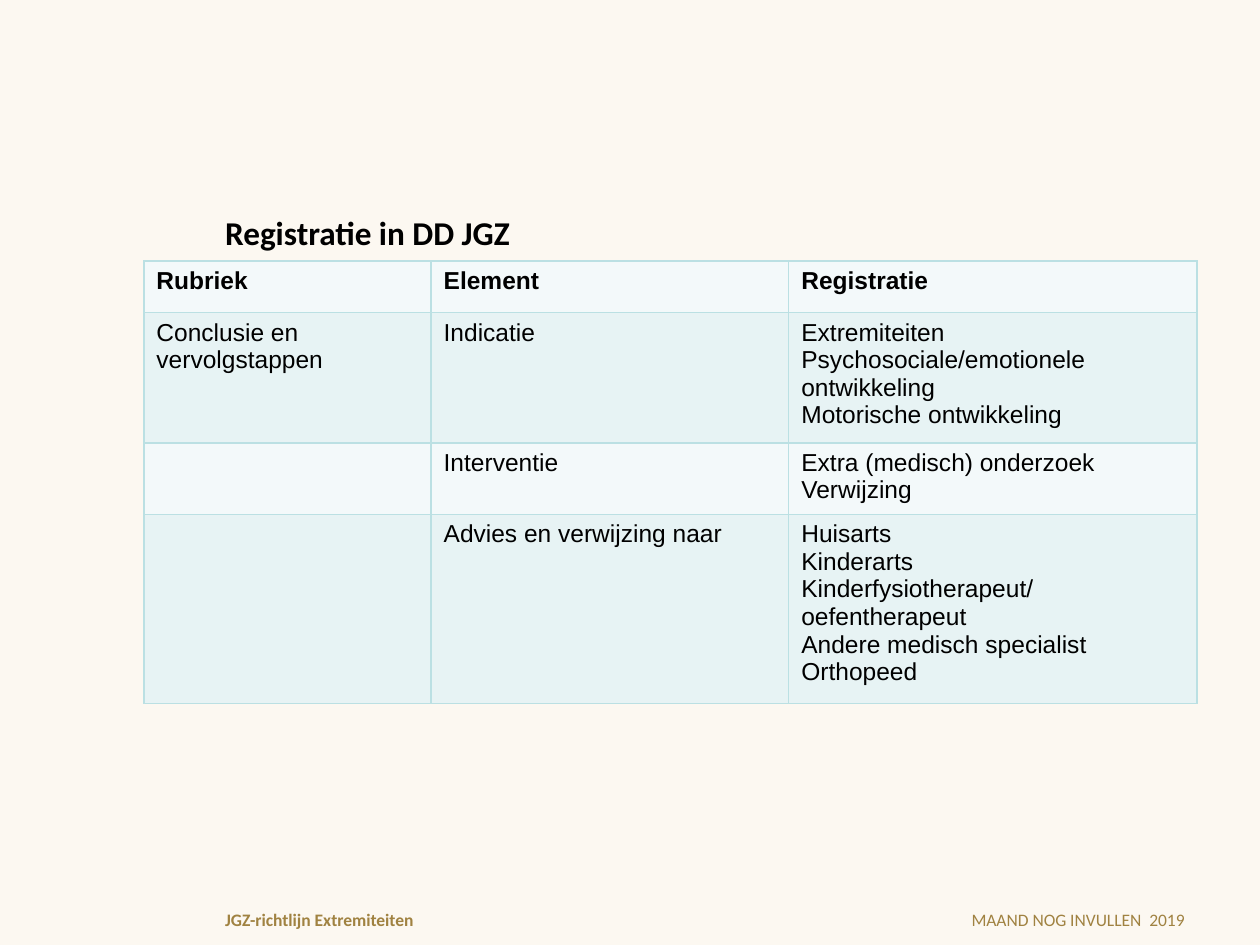
from lxml import etree
from pptx import Presentation
from pptx.dml.color import RGBColor
from pptx.enum.text import MSO_ANCHOR, PP_ALIGN
from pptx.oxml.ns import qn
from pptx.util import Cm, Pt

LEFT, RIGHT = PP_ALIGN.LEFT, PP_ALIGN.RIGHT
MIDDLE = MSO_ANCHOR.MIDDLE

CREAM = RGBColor(0xFC, 0xF8, 0xF1)
BLACK = RGBColor(0x00, 0x00, 0x00)
GOLD = RGBColor(0xA0, 0x82, 0x41)
LIGHT_ROW = RGBColor(0xF3, 0xF9, 0xFA)
DARK_ROW = RGBColor(0xE7, 0xF3, 0xF4)
BORDER = RGBColor(0xBB, 0xE0, 0xE3)

COL_WIDTHS = [5.79, 7.21, 8.23]
ROW_HEIGHTS = [1.04, 2.48, 1.37, 3.58]
ROWS = [
    ["Rubriek", "Element", "Registratie"],
    ["Conclusie en vervolgstappen", "Indicatie",
     "Extremiteiten\nPsychosociale/emotionele ontwikkeling\nMotorische ontwikkeling"],
    ["", "Interventie", "Extra (medisch) onderzoek\nVerwijzing"],
    ["", "Advies en verwijzing naar",
     "Huisarts\nKinderarts\nKinderfysiotherapeut/oefentherapeut\n"
     "Andere medisch specialist\nOrthopeed"],
]


def style_text(tf, font, size, color, bold=False, align=LEFT):
    for p in tf.paragraphs:
        p.alignment = align
        for r in p.runs:
            r.font.name = font
            r.font.size = Pt(size)
            r.font.bold = bold
            r.font.color.rgb = color


def add_label(slide, text, left, top, width, height, size, color, bold=False, align=LEFT):
    tf = slide.shapes.add_textbox(Cm(left), Cm(top), Cm(width), Cm(height)).text_frame
    tf.word_wrap = True
    tf.vertical_anchor = MIDDLE
    tf.text = text
    style_text(tf, "Calibri", size, color, bold, align)


def set_borders(cell):
    """Draw a thin line on all four sides; call before setting the fill."""
    tc_pr = cell._tc.get_or_add_tcPr()
    for side in ("a:lnL", "a:lnR", "a:lnT", "a:lnB"):
        ln = etree.SubElement(tc_pr, qn(side), w=str(Pt(1)))
        fill = etree.SubElement(ln, qn("a:solidFill"))
        etree.SubElement(fill, qn("a:srgbClr"), val=str(BORDER))


def add_registration_table(slide, left, top):
    table = slide.shapes.add_table(
        len(ROWS), len(COL_WIDTHS), Cm(left), Cm(top),
        Cm(sum(COL_WIDTHS)), Cm(sum(ROW_HEIGHTS))).table
    for column, width in zip(table.columns, COL_WIDTHS):
        column.width = Cm(width)
    for i, (row, height, texts) in enumerate(zip(table.rows, ROW_HEIGHTS, ROWS)):
        row.height = Cm(height)
        for cell, text in zip(row.cells, texts):
            set_borders(cell)
            cell.fill.solid()
            cell.fill.fore_color.rgb = DARK_ROW if i % 2 else LIGHT_ROW
            cell.text_frame.text = text
            style_text(cell.text_frame, "Arial", 14, BLACK, bold=i == 0)


def add_footer(slide, left, top, width, height):
    date_width = 5.51
    title_width = width - date_width
    add_label(slide, "JGZ-richtlijn Extremiteiten", left, top, title_width, height,
              10, GOLD, bold=True)
    add_label(slide, "MAAND NOG INVULLEN  2019", left + title_width, top, date_width, height,
              10, GOLD, align=RIGHT)


def main():
    prs = Presentation()
    prs.slide_width, prs.slide_height = Cm(25.4), Cm(19.05)
    slide = prs.slides.add_slide(prs.slide_layouts[6])
    slide.background.fill.solid()
    slide.background.fill.fore_color.rgb = CREAM
    add_label(slide, "Registratie in DD JGZ", 4.29, 4.11, 19.84, 1.14, 19, BLACK, bold=True)
    add_registration_table(slide, 2.9, 5.26)
    add_footer(slide, 4.29, 18.21, 19.84, 0.64)
    prs.save("out.pptx")


if __name__ == "__main__":
    main()
